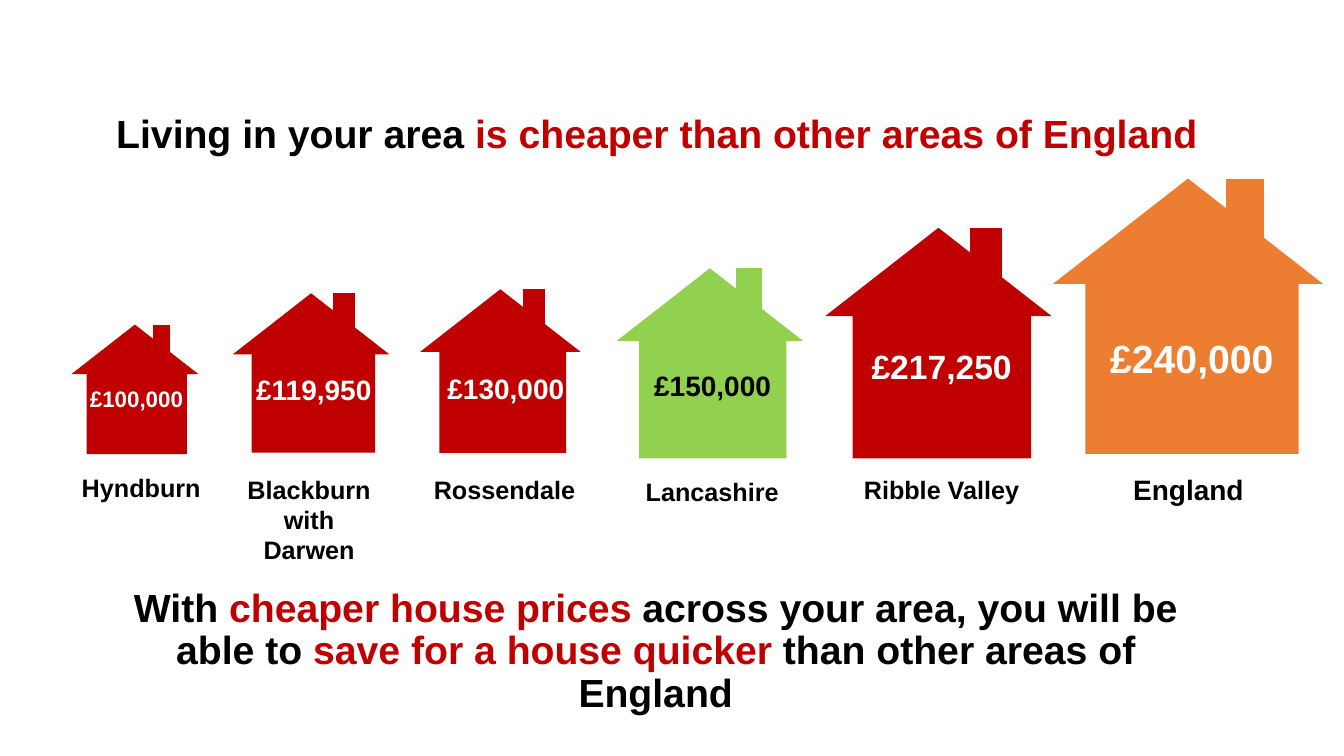
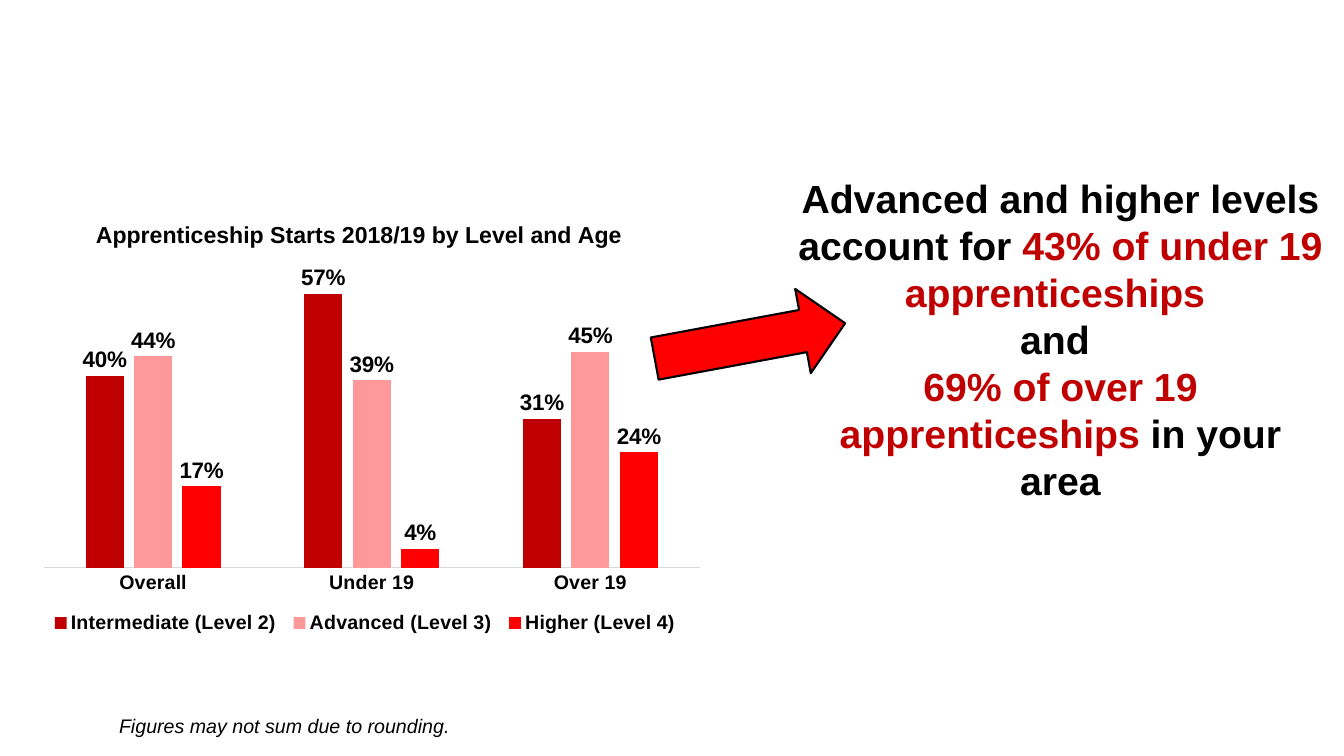
import pptx
import pptx.chart.data
import pptx.dml.color
import pptx.enum.chart
import pptx.enum.shapes
import pptx.enum.text
import pptx.oxml.ns
import pptx.util
from lxml import etree

Cm = pptx.util.Cm
Pt = pptx.util.Pt
qn = pptx.oxml.ns.qn
ALIGN = pptx.enum.text.PP_ALIGN
ANCHOR = pptx.enum.text.MSO_ANCHOR
SHAPE = pptx.enum.shapes.MSO_SHAPE

HUES = {
    "black": "000000",
    "white": "FFFFFF",
    "red": "C00000",
    "bright": "FF0000",
    "pink": "FF9999",
    "green": "92D050",
    "orange": "ED7D31",
    "grey": "D9D9D9",
}
BOLD = {"name": "Arial", "bold": True, "italic": False}
NOTE = {"name": "Arial", "bold": False, "italic": True}
HEAD = 28

# Parts of a house as shares of its width
WALLS = (0.12, 0.39, 0.79, 0.63)
ROOF = [(0.5, 0), (0, 0.39), (1, 0.39)]
STACK = [(0.78, 0.26), (0.64, 0.26), (0.64, 0), (0.78, 0)]

# place, price, fill, ink, house (left, top, width),
# price box (left, top, width, size), name box (left, top, width, size)
AREAS = [
    ("Hyndburn", "£100,000", "red", "white",
     (1.8, 8.18, 3.2), (1.28, 9.58, 4.32, 16), (1.78, 11.77, 3.56, 18)),
    ("Blackburn with Darwen", "£119,950", "red", "white",
     (5.87, 7.39, 3.94), (5.75, 9.25, 4.32, 20), (5.82, 11.82, 3.94, 18)),
    ("Rossendale", "£130,000", "red", "white",
     (10.59, 7.29, 4.04), (10.59, 9.24, 4.32, 20), (10.49, 11.83, 4.45, 18)),
    ("Lancashire", "£150,000", "green", "black",
     (15.54, 6.76, 4.7), (15.8, 9.17, 4.32, 20), (15.98, 11.88, 3.94, 18)),
    ("Ribble Valley", "£217,250", "red", "white",
     (20.8, 5.74, 5.7), (21.57, 8.59, 4.32, 24), (21.37, 11.83, 4.72, 18)),
    ("England", "£240,000", "orange", "white",
     (26.54, 4.5, 6.8), (27.61, 8.31, 4.85, 28), (27.59, 11.79, 4.72, 20)),
]

LEVELS = [
    ("Intermediate (Level 2)", "red", (0.4, 0.57, 0.31)),
    ("Advanced (Level 3)", "pink", (0.44, 0.39, 0.45)),
    ("Higher (Level 4)", "bright", (0.17, 0.04, 0.24)),
]


def hue(name):
    return pptx.dml.color.RGBColor.from_string(HUES[name])


def put(item, **values):
    for name, value in values.items():
        setattr(item, name, value)


def style(font, size, ink="black", face=BOLD):
    put(font, size=Pt(size), **face)
    font.color.rgb = hue(ink)


def paint(shape, fill):
    shape.shadow.inherit = False
    shape.fill.solid()
    shape.fill.fore_color.rgb = hue(fill)
    shape.line.fill.background()


def write(slide, box, paras, size, align=ALIGN.CENTER, anchor=ANCHOR.TOP,
          space=1.0, face=BOLD):
    """Add a text box; each paragraph is a list of (text, ink) runs."""
    frame = slide.shapes.add_textbox(*map(Cm, box)).text_frame
    put(frame, word_wrap=True, vertical_anchor=anchor)
    for i, runs in enumerate(paras):
        para = frame.add_paragraph() if i else frame.paragraphs[0]
        put(para, alignment=align, line_spacing=space)
        for text, ink in runs:
            run = para.add_run()
            run.text = text
            style(run.font, size, ink, face)


def house(slide, left, top, width, fill):
    """Group walls, roof and chimney, all scaled to the width."""
    def spot(x, y):
        return Cm(left + x * width), Cm(top + y * width)

    parts = slide.shapes.add_group_shape().shapes
    x, y, wide, high = WALLS
    walls = parts.add_shape(SHAPE.RECTANGLE, *spot(x, y),
                            Cm(wide * width), Cm(high * width))
    paint(walls, fill)
    for first, *rest in (ROOF, STACK):
        form = parts.build_freeform(*spot(*first))
        form.add_line_segments([spot(*point) for point in rest], close=True)
        paint(form.convert_to_shape(), fill)


def arrow(slide, box, turn):
    shape = slide.shapes.add_shape(SHAPE.RIGHT_ARROW, *map(Cm, box))
    paint(shape, "bright")
    shape.rotation = turn
    shape.line.color.rgb = hue("black")
    shape.line.width = Pt(1.5)


def place(chart, tag, index, **sides):
    """Give a chart part a fixed place, in shares of the chart."""
    part = chart.element.find(".//" + qn(tag))
    for old in part.findall(qn("c:layout")):
        part.remove(old)
    layout = etree.Element(qn("c:layout"))
    part.insert(index, layout)
    manual = etree.SubElement(layout, qn("c:manualLayout"))
    marks = {"layoutTarget": "inner"} if tag == "c:plotArea" else {}
    marks.update(xMode="edge", yMode="edge", **sides)
    for name, value in marks.items():
        etree.SubElement(manual, qn("c:" + name)).set("val", str(value))


def bars(slide, box):
    enum = pptx.enum.chart
    data = pptx.chart.data.CategoryChartData(number_format="0%")
    data.categories = ["Overall", "Under 19", "Over 19"]
    for name, _, values in LEVELS:
        data.add_series(name, values)
    kind = enum.XL_CHART_TYPE.COLUMN_CLUSTERED
    chart = slide.shapes.add_chart(kind, *map(Cm, box), data).chart
    style(chart.font, 14)

    chart.has_title = True
    run = chart.chart_title.text_frame.paragraphs[0].add_run()
    run.text = "Apprenticeship Starts 2018/19 by Level and Age"
    style(run.font, 16.5)

    chart.has_legend = True
    put(chart.legend, position=enum.XL_LEGEND_POSITION.BOTTOM,
        include_in_layout=False)
    style(chart.legend.font, 14)

    put(chart.value_axis, visible=False, has_major_gridlines=False,
        minimum_scale=0, maximum_scale=0.6)
    axis = chart.category_axis
    put(axis, major_tick_mark=enum.XL_TICK_MARK.NONE)
    style(axis.tick_labels.font, 14)
    axis.format.line.color.rgb = hue("grey")
    axis.format.line.width = Pt(0.75)

    plot = chart.plots[0]
    put(plot, gap_width=219, overlap=-27, vary_by_categories=False)
    for series, (_, fill, _) in zip(plot.series, LEVELS):
        series.format.fill.solid()
        series.format.fill.fore_color.rgb = hue(fill)
        labels = series.data_labels
        put(labels, show_value=True, number_format="0%",
            number_format_is_linked=False,
            position=enum.XL_LABEL_POSITION.OUTSIDE_END)
        style(labels.font, 16)

    place(chart, "c:plotArea", 0, x=0.02, y=0.15, w=0.96, h=0.68)
    place(chart, "c:title", 1, x=0.09, y=0)
    place(chart, "c:legend", 1, x=0.02, y=0.92, w=0.94, h=0.08)


def homes(slide):
    title = [("Living in your area ", "black"),
             ("is cheaper than other areas of England", "red")]
    write(slide, (2.68, 2.39, 29.21, 2.06), [title], HEAD,
          align=ALIGN.LEFT, anchor=ANCHOR.MIDDLE, space=0.9)
    for name, price, fill, ink, spot, tag, label in AREAS:
        house(slide, *spot, fill)
        for text, tone, (left, top, width, size) in (
                (price, ink, tag), (name, "black", label)):
            write(slide, (left, top, width, 1), [[(text, tone)]], size)
    close = [("With ", "black"), ("cheaper house prices ", "red"),
             ("across your area, you will be able to ", "black"),
             ("save for a house quicker", "red"),
             (" than other areas of England", "black")]
    write(slide, (2.86, 15.4, 27.33, 2.06), [close], HEAD,
          anchor=ANCHOR.MIDDLE, space=0.9)


def starts(slide):
    claim = [
        [("Advanced and higher levels account for ", "black"),
         ("43% of under 19 apprenticeships ", "red")],
        [("and ", "black")],
        [("69% of over 19 apprenticeships", "red"), (" in your area", "black")],
    ]
    write(slide, (19.83, 4.27, 13.79, 8.64), claim, HEAD)
    arrow(slide, (16.46, 7.51, 4.88, 2.16), 349.5)
    bars(slide, (0.76, 5.44, 17.22, 10.69))
    write(slide, (2.75, 17.86, 17.37, 0.76),
          [[("Figures may not sum due to rounding.", "black")]], 14,
          align=ALIGN.LEFT, face=NOTE)


def main():
    deck = pptx.Presentation()
    put(deck, slide_width=Cm(33.87), slide_height=Cm(19.05))
    for fill in (homes, starts):
        fill(deck.slides.add_slide(deck.slide_layouts[6]))
    deck.save("out.pptx")


if __name__ == "__main__":
    main()
